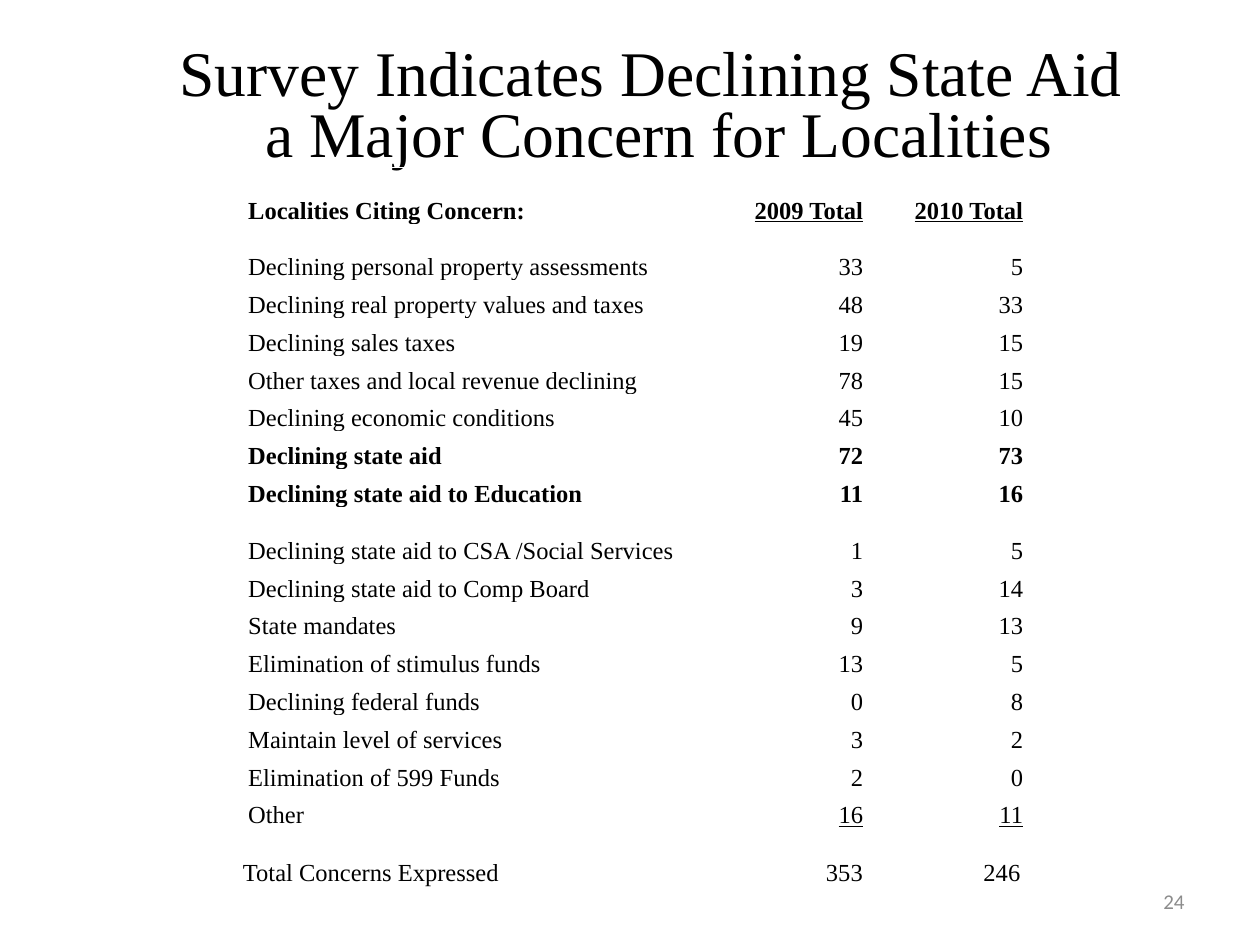
"""Build the slide on local concerns about declining state aid."""
import copy

from lxml import etree
from pptx import Presentation
from pptx.dml.color import RGBColor
from pptx.enum import text
from pptx.oxml import ns
from pptx.util import Inches, Pt

BLACK = RGBColor(0x00, 0x00, 0x00)
GRAY = RGBColor(0x8C, 0x8C, 0x8C)
WHITE = RGBColor(0xFF, 0xFF, 0xFF)
SERIF = "Times New Roman"
LEFT, CENTER, RIGHT = (text.PP_ALIGN.LEFT, text.PP_ALIGN.CENTER,
                       text.PP_ALIGN.RIGHT)
BODY = {"name": SERIF, "size": Pt(14), "bold": False, "underline": False}

HEADINGS = ("Localities Citing Concern:", "2009 Total", "2010 Total")
CONCERNS = [
    ("Declining personal property assessments", 33, 5),
    ("Declining real property values and taxes", 48, 33),
    ("Declining sales taxes", 19, 15),
    ("Other taxes and local revenue declining", 78, 15),
    ("Declining economic conditions", 45, 10),
    ("Declining state aid", 72, 73),
    ("Declining state aid to Education", 11, 16),
    ("Declining state aid to CSA /Social Services", 1, 5),
    ("Declining state aid to Comp Board", 3, 14),
    ("State mandates", 9, 13),
    ("Elimination of stimulus funds", 13, 5),
    ("Declining federal funds", 0, 8),
    ("Maintain level of services", 3, 2),
    ("Elimination of 599 Funds", 2, 0),
    ("Other", 16, 11),
]
BOLD_ROWS = (0, 6, 7)
TALL_ROWS = (0, 1, 8)
COLUMN_WIDTHS = (3.85, 1.13, 1.27)


def set_values(target, values):
    """Set each named attribute on the target."""
    for name, value in values.items():
        setattr(target, name, value)


def write(frame, words, style, color, align, spacing=None):
    """Write one formatted paragraph and return it."""
    frame.text = words
    para = frame.paragraphs[0]
    set_values(para, {"alignment": align, "line_spacing": spacing})
    for span in para.runs:
        set_values(span.font, style)
        span.font.color.rgb = color
    for line_break in para._p.findall(ns.qn("a:br")):
        line_break.append(copy.deepcopy(para.runs[0]._r.rPr))
    return para


def add_title(page):
    """Fill the title placeholder."""
    title = page.shapes.title
    set_values(title, {"left": Inches(0.67), "top": Inches(0.33),
                       "width": Inches(9), "height": Inches(1.12)})
    set_values(title.text_frame, {"word_wrap": True,
                                  "auto_size": text.MSO_AUTO_SIZE.NONE,
                                  "vertical_anchor": text.MSO_ANCHOR.TOP})
    write(title.text_frame,
          "Survey Indicates Declining State Aid\v a Major Concern for Localities",
          {"name": SERIF, "size": Pt(36.3)}, BLACK, CENTER, 0.8)


def add_text(page, area, words, style, color, align):
    """Add a vertically centred text box and return its paragraph."""
    box = page.shapes.add_textbox(*map(Inches, area))
    set_values(box.text_frame, {"word_wrap": True,
                                "vertical_anchor": text.MSO_ANCHOR.MIDDLE})
    return write(box.text_frame, words, style, color, align)


def add_right_tabs(para, positions):
    """Give a paragraph right-aligned tab stops."""
    properties = para._p.get_or_add_pPr()
    stops = etree.SubElement(properties, ns.qn("a:tabLst"))
    for position in positions:
        etree.SubElement(stops, ns.qn("a:tab"),
                         pos=str(Inches(position)), algn="r")


def fill_cell(cell, words, row, column):
    """Format one table cell according to its row and column."""
    set_values(cell, {"margin_left": Inches(0.05), "margin_right": Inches(0.05),
                      "margin_top": 0, "margin_bottom": 0,
                      "vertical_anchor": text.MSO_ANCHOR.BOTTOM})
    if row == 0 and column:
        cell.fill.solid()
        cell.fill.fore_color.rgb = WHITE
    else:
        cell.fill.background()
    underlined = column > 0 and row in (0, len(CONCERNS))
    style = {**BODY, "bold": row in BOLD_ROWS, "underline": underlined}
    write(cell.text_frame, str(words), style, BLACK,
          RIGHT if column else LEFT, 1.15)


def add_concerns(page):
    """Add the table of concerns by year."""
    rows = [HEADINGS, *CONCERNS]
    table = page.shapes.add_table(
        len(rows), len(HEADINGS), Inches(1.92), Inches(1.33),
        Inches(6.25), Inches(5.25)).table
    set_values(table, {"first_row": False, "horz_banding": False})
    for column, width in zip(table.columns, COLUMN_WIDTHS):
        column.width = Inches(width)
    for row, values in enumerate(rows):
        table.rows[row].height = Inches(0.45 if row in TALL_ROWS else 0.3)
        for column, value in enumerate(values):
            fill_cell(table.cell(row, column), value, row, column)


def main():
    """Create and save the deck."""
    deck = Presentation()
    set_values(deck, {"slide_width": Inches(10), "slide_height": Inches(7.5)})
    page = deck.slides.add_slide(deck.slide_layouts[5])
    add_text(page, (7.17, 6.95, 2.33, 0.4), "24",
             {"name": "Calibri", "size": Pt(12)}, GRAY, RIGHT)
    add_title(page)
    add_concerns(page)
    totals = add_text(page, (1.83, 6.75, 7.67, 0.34),
                      "Total Concerns Expressed\t353\t246", BODY, BLACK, LEFT)
    add_right_tabs(totals, (4.92, 6.17))
    deck.save("out.pptx")


if __name__ == "__main__":
    main()
